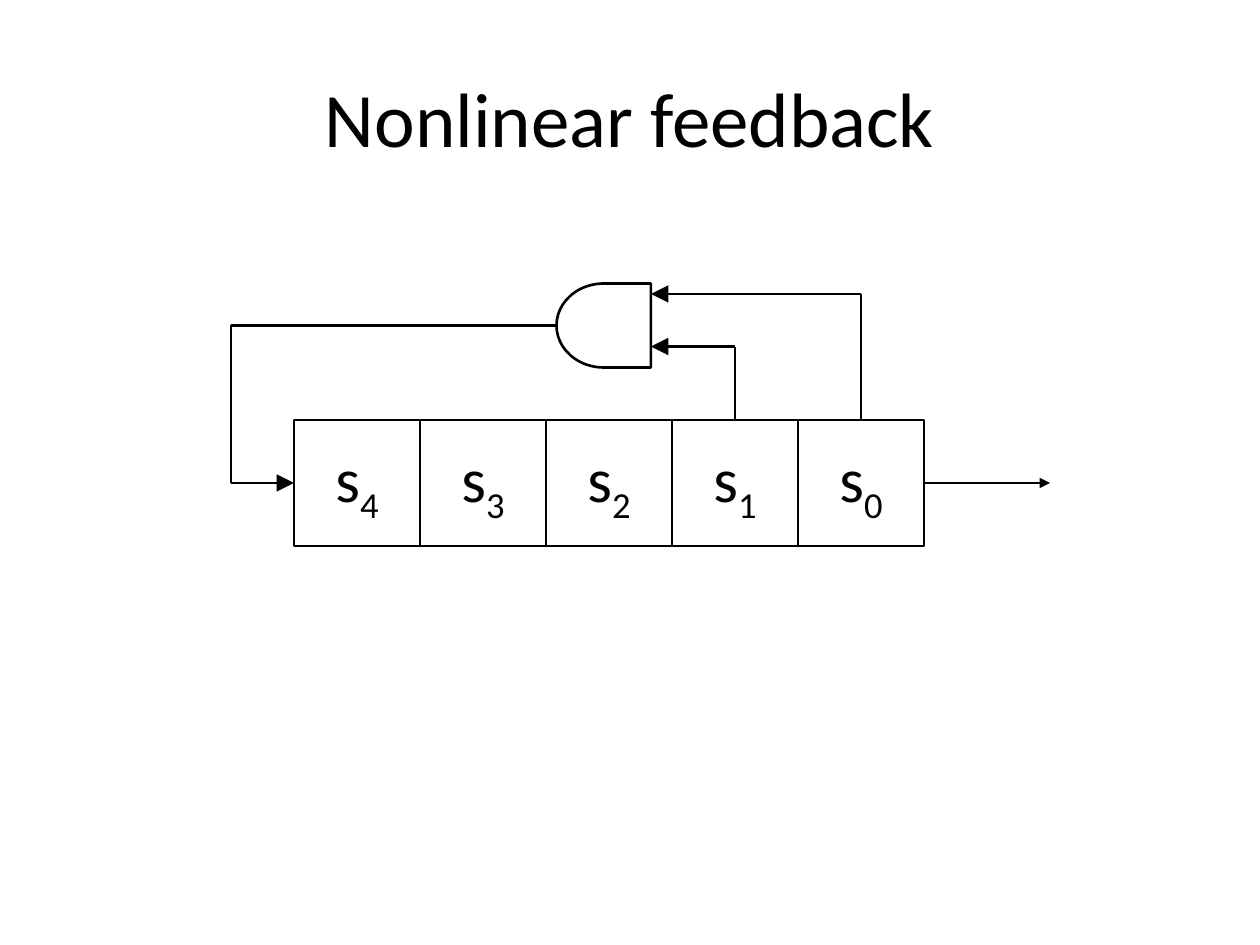
from typing import NamedTuple, Optional

from pptx import Presentation
from pptx.dml.color import RGBColor
from pptx.enum.shapes import MSO_CONNECTOR as Connector, MSO_SHAPE as Preset
from pptx.enum.text import MSO_ANCHOR as Anchor, PP_ALIGN as Align
from pptx.oxml.ns import qn
from pptx.shapes.autoshape import Shape
from pptx.util import Emu, Pt

INK = RGBColor(0x00, 0x00, 0x00)
PAPER = RGBColor(0xFF, 0xFF, 0xFF)
FONT = "Calibri"
LINE_WIDTH = Pt(1.5)
EMU_PER_PX = 7620  # 120 px to the inch
TOP, LEFT, RIGHT = 0, 1, 3  # connection sites of a rectangle


class Box(NamedTuple):
    left: int
    top: int
    width: int
    height: int


class Point(NamedTuple):
    x: int
    y: int


class Wire(NamedTuple):
    start: Point
    end: Point
    arrow: Optional[str] = None  # arrowhead size at the end
    start_joint: Optional[tuple[int, int]] = None  # stage number, site
    end_joint: Optional[tuple[int, int]] = None


def px(length: int) -> Emu:
    return Emu(length * EMU_PER_PX)


def add_text(shape: Shape, size: int, text: str, subscript: str = "") -> None:
    frame = shape.text_frame
    frame.word_wrap = True
    frame.vertical_anchor = Anchor.MIDDLE
    paragraph = frame.paragraphs[0]
    paragraph.alignment = Align.CENTER
    font_format = {"name": FONT, "size": Pt(size)}
    for part in filter(None, (text, subscript)):
        run = paragraph.add_run()
        run.text = part
        for attribute, value in font_format.items():
            setattr(run.font, attribute, value)
        run.font.color.rgb = INK
    if subscript:
        run.font._element.set("baseline", "-25000")


def add_outline(shapes, preset: Preset, box: Box) -> Shape:
    shape = shapes.add_shape(preset, *map(px, box))
    shape.shadow.inherit = False
    shape.fill.background()
    shape.line.color.rgb = INK
    shape.line.width = LINE_WIDTH
    return shape


def add_wire(shapes, wire: Wire, stages: dict[int, Shape]) -> None:
    connector = shapes.add_connector(
        Connector.STRAIGHT, *map(px, wire.start + wire.end))
    connector.line.color.rgb = INK
    connector.line.width = LINE_WIDTH
    if wire.start_joint:
        stage, site = wire.start_joint
        connector.begin_connect(stages[stage], site)
    if wire.end_joint:
        stage, site = wire.end_joint
        connector.end_connect(stages[stage], site)
    properties = connector._element.spPr
    if wire.arrow:
        tail = properties.find(qn("a:ln")).makeelement(
            qn("a:tailEnd"),
            {"type": "triangle", "w": wire.arrow, "len": wire.arrow})
        properties.find(qn("a:ln")).append(tail)
    properties.append(properties.makeelement(qn("a:effectLst"), {}))


# Register and gate geometry
STAGE = 120
REGISTER = Point(280, 400)
STAGE_COUNT = 5
GATE = Box(530, 270, 90, 80)
GATE_RIGHT = GATE.left + GATE.width
GATE_MIDDLE = GATE.top + GATE.height // 2
STAGE_MIDDLE = REGISTER.y + STAGE // 2
REGISTER_RIGHT = REGISTER.x + STAGE_COUNT * STAGE
FEEDBACK_X = REGISTER.x - STAGE // 2
TAP_HEIGHTS = {1: 330, 0: 280}  # stage number -> gate input height


def stage_left(number: int) -> int:
    return REGISTER.x + (STAGE_COUNT - 1 - number) * STAGE


def tap_wires(number: int, height: int) -> list[Wire]:
    x = stage_left(number) + STAGE // 2
    corner = Point(x, height)
    return [
        Wire(Point(x, REGISTER.y), corner, start_joint=(number, TOP)),
        Wire(corner, Point(GATE_RIGHT, height), arrow="lg"),
    ]


def main() -> None:
    presentation = Presentation()
    presentation.slide_width, presentation.slide_height = px(1200), px(900)
    slide = presentation.slides.add_slide(presentation.slide_layouts[6])
    slide.background.fill.solid()
    slide.background.fill.fore_color.rgb = PAPER
    shapes = slide.shapes

    # Title
    title = shapes.add_textbox(*map(px, Box(60, 36, 1080, 150)))
    add_text(title, 44, "Nonlinear feedback")

    # Shift register
    stages: dict[int, Shape] = {}
    for number in reversed(range(STAGE_COUNT)):
        box = Box(stage_left(number), REGISTER.y, STAGE, STAGE)
        stages[number] = add_outline(shapes, Preset.RECTANGLE, box)
        add_text(stages[number], 36, "s", str(number))

    # AND gate, facing left
    gate = add_outline(shapes, Preset.FLOWCHART_DELAY, GATE)
    gate._element.spPr.xfrm.set("flipH", "1")

    # Taps, feedback path and output
    feedback_top = Point(FEEDBACK_X, GATE_MIDDLE)
    feedback_bottom = Point(FEEDBACK_X, STAGE_MIDDLE)
    wires = [wire for tap in TAP_HEIGHTS.items() for wire in tap_wires(*tap)]
    wires += [
        Wire(Point(GATE.left, GATE_MIDDLE), feedback_top),
        Wire(feedback_top, feedback_bottom),
        Wire(feedback_bottom, Point(REGISTER.x, STAGE_MIDDLE), arrow="lg",
             end_joint=(STAGE_COUNT - 1, LEFT)),
        Wire(Point(REGISTER_RIGHT, STAGE_MIDDLE),
             Point(REGISTER_RIGHT + STAGE, STAGE_MIDDLE), arrow="med",
             start_joint=(0, RIGHT)),
    ]
    for wire in wires:
        add_wire(shapes, wire, stages)

    presentation.save("out.pptx")


if __name__ == "__main__":
    main()
